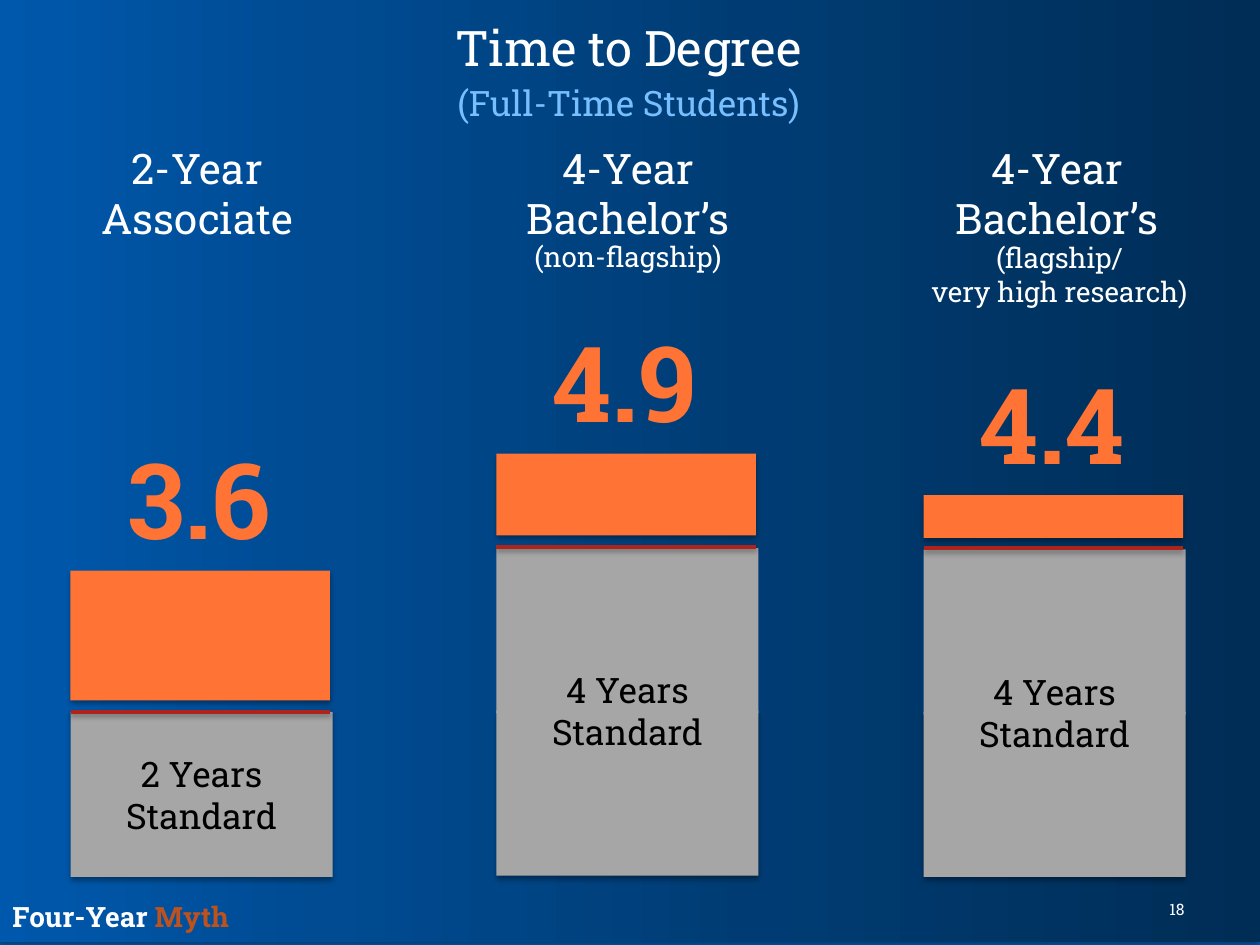
from lxml import etree
from pptx import Presentation
from pptx.dml.color import RGBColor
from pptx.enum.shapes import MSO_CONNECTOR as CONN, MSO_SHAPE as SHAPE
from pptx.enum.text import MSO_ANCHOR as ANCHOR, MSO_AUTO_SIZE as FIT, PP_ALIGN as ALIGN
from pptx.oxml import parse_xml
from pptx.oxml.ns import nsdecls, qn
from pptx.util import Inches, Pt

FONT = "Roboto Slab"
WHITE, BLACK, ORANGE, GRAY = "FFFFFF", "000000", "FF7334", "A6A6A6"
RED, RUST, SKY, BLUE = "AE241C", "BD521E", "78BFFF", "005AAC"
BACKDROP = [(0, "0058AC"), (26, "004B92"), (60, "003C73"), (100, "002D56")]
BLOCK_W, BLOCK_H, BLOCK_STEP = 2.08, 1.31, 1.29
BAR_W = 2.06

# left, bottom block top, blocks, standard label, label top, extra top, extra height, years
COLUMNS = [
    (0.56, 5.65, 1, "2 Years Standard", 5.92, 4.53, 1.03, "3.6"),
    (3.94, 5.64, 2, "4 Years Standard", 5.26, 3.6, 0.65, "4.9"),
    (7.33, 5.65, 2, "4 Years Standard", 5.27, 3.93, 0.34, "4.4"),
]
# box, lines, size
HEADINGS = [
    ((0.68, 1.08, 1.77, 0.91), ["2-Year", "Associate"], 24),
    ((3.57, 1.08, 2.83, 0.91), ["4-Year", "Bachelor’s"], 24),
    ((7.44, 1.08, 1.9, 0.91), ["4-Year", "Bachelor’s"], 24),
    ((3.57, 1.85, 2.83, 0.37), ["(non-flagship)"], 16),
    ((6.99, 1.86, 2.84, 0.64), ["(flagship/", "very high research)"], 16),
]


def rgb(color):
    return RGBColor.from_string(color)


def inches(box):
    return [Inches(v) for v in box]


def add_shadow(sp, alpha=35, dist=1.8):
    """Drop a soft black shadow straight below the shape."""
    sp_pr = sp._element.spPr
    for old in sp_pr.findall(qn("a:effectLst")):
        sp_pr.remove(old)
    sp_pr.append(parse_xml(
        f'<a:effectLst {nsdecls("a")}><a:outerShdw blurRad="{Pt(3.1)}" dist="{Pt(dist)}" '
        f'dir="5400000" rotWithShape="0"><a:srgbClr val="000000">'
        f'<a:alpha val="{alpha * 1000}"/></a:srgbClr></a:outerShdw></a:effectLst>'))


def add_block(s, box, color, shadow=True):
    sp = s.shapes.add_shape(SHAPE.RECTANGLE, *inches(box))
    sp.shadow.inherit = False
    sp.fill.solid()
    sp.fill.fore_color.rgb = rgb(color)
    sp.line.fill.background()
    if shadow:
        add_shadow(sp)
    return sp


def add_backdrop(s):
    sp = add_block(s, (0, -0.02, 10, 7.5), BLUE)
    sp.fill.gradient()
    sp.fill.gradient_angle = 0
    stops = sp._element.spPr.find(qn("a:gradFill")).find(qn("a:gsLst"))
    for old in list(stops):
        stops.remove(old)
    for pos, color in BACKDROP:
        gs = etree.SubElement(stops, qn("a:gs"), pos=str(pos * 1000))
        etree.SubElement(gs, qn("a:srgbClr"), val=color)


def add_rule(s, left, top):
    line = s.shapes.add_connector(
        CONN.STRAIGHT, *inches((left, top, left + BAR_W, top)))
    line.line.color.rgb = rgb(RED)
    line.line.width = Pt(2)
    add_shadow(line, alpha=38, dist=1.6)


def style(p, size, color, align=ALIGN.CENTER, bold=False):
    p.alignment = align
    f = p.font
    f.name, f.size, f.bold = FONT, Pt(size), bold
    f.color.rgb = rgb(color)


def add_text(s, box, lines, size, color=WHITE, align=ALIGN.CENTER, bold=False,
             anchor=ANCHOR.TOP):
    tf = s.shapes.add_textbox(*inches(box)).text_frame
    tf.word_wrap = True
    tf.vertical_anchor = anchor
    tf.text = "\n".join(lines)
    for p in tf.paragraphs:
        style(p, size, color, align, bold)
    return tf


def add_title(s, text):
    title = s.shapes.title
    title.left, title.top, title.width, title.height = inches((0.2, 0.09, 9.58, 0.57))
    tf = title.text_frame
    tf.text = text
    tf.auto_size = FIT.NONE
    tf.vertical_anchor = ANCHOR.TOP
    style(tf.paragraphs[0], 28, WHITE)
    s.shapes._spTree.append(title._element)  # bring in front of the backdrop


def add_column(s, left, base, blocks, label, label_top, extra_top, extra_h, years):
    # One gray block for every two standard years
    for i in range(blocks):
        add_block(s, (left, base - i * BLOCK_STEP, BLOCK_W, BLOCK_H), GRAY, shadow=i == 0)
    add_text(s, (left, label_top, BLOCK_W, 0.77), [label], 20, BLACK)
    add_rule(s, left, base - (blocks - 1) * (BLOCK_STEP + 0.01))
    # Extra time beyond the standard
    add_block(s, (left, extra_top, BAR_W, extra_h), ORANGE)
    add_text(s, (left - 0.02, extra_top - 1.13, BLOCK_W, 1.11), [years], 60, ORANGE, bold=True)


def add_footer(s):
    add_text(s, (7.17, 7.09, 2.33, 0.26), ["18"], 9, align=ALIGN.RIGHT, anchor=ANCHOR.MIDDLE)
    p = add_text(s, (0, 7.09, 4.35, 0.37), ["Four-Year "], 16,
                 align=ALIGN.LEFT, bold=True).paragraphs[0]
    r = p.add_run()
    r.text = "Myth"
    r.font.color.rgb = rgb(RUST)


def main():
    prs = Presentation()
    prs.slide_width, prs.slide_height = Inches(10), Inches(7.5)
    s = prs.slides.add_slide(prs.slide_layouts[5])
    s.background.fill.solid()
    s.background.fill.fore_color.rgb = rgb(BLUE)

    add_backdrop(s)
    add_title(s, "Time to Degree")
    add_text(s, (0.2, 0.6, 9.58, 0.44), ["(Full-Time Students)"], 20, SKY)
    for box, lines, size in HEADINGS:
        add_text(s, box, lines, size)
    for column in COLUMNS:
        add_column(s, *column)
    add_footer(s)
    prs.save("out.pptx")


if __name__ == "__main__":
    main()
